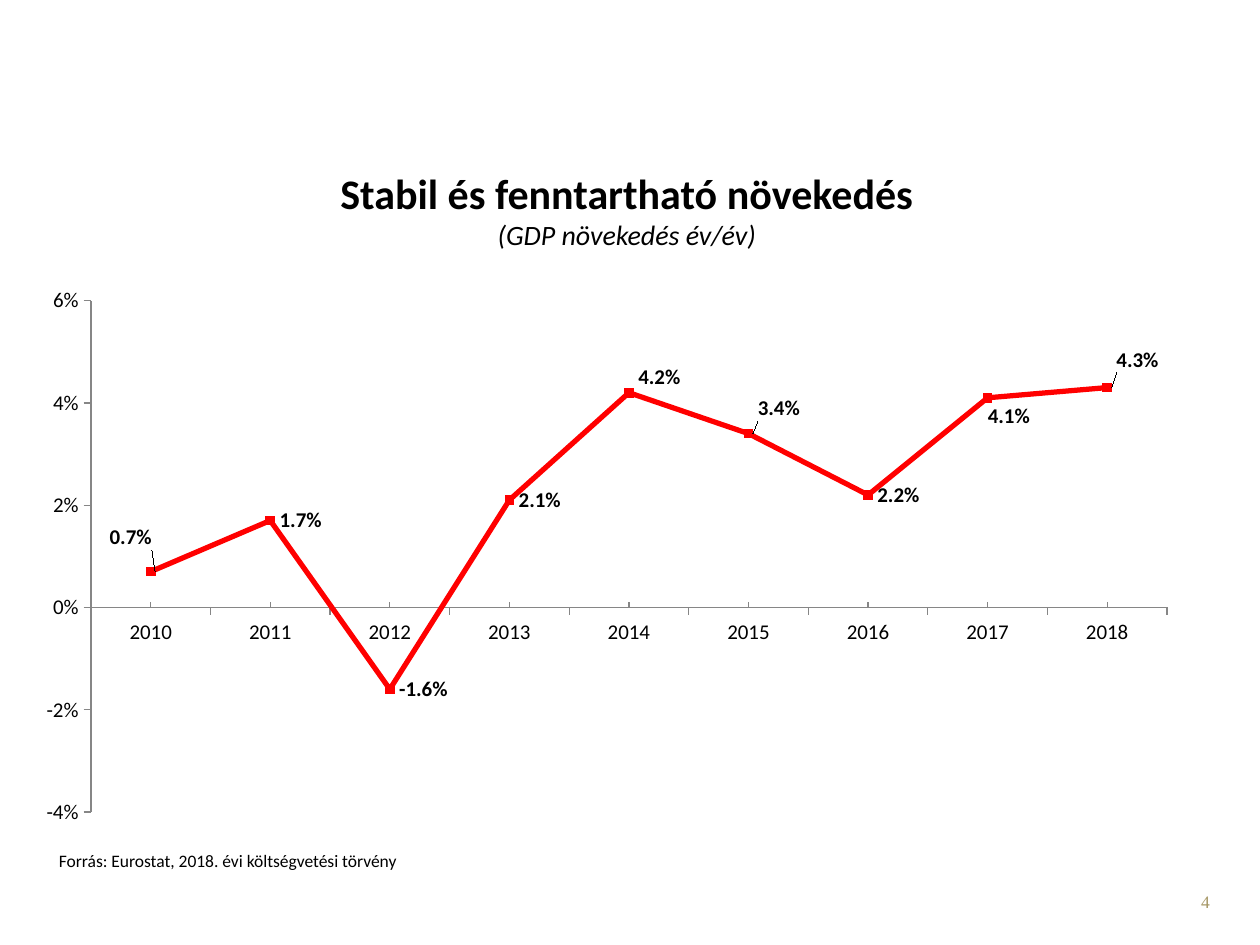
"""Build a slide with a line chart of yearly GDP growth."""
from lxml.etree import SubElement
from pptx import Presentation
from pptx.chart.data import CategoryChartData
from pptx.dml.color import RGBColor
from pptx.enum.chart import XL_CHART_TYPE as ChartType, XL_LABEL_POSITION as LabelPosition
from pptx.enum.chart import XL_MARKER_STYLE as MarkerStyle, XL_TICK_MARK as TickMark
from pptx.enum.text import PP_ALIGN as Align
from pptx.oxml import parse_xml
from pptx.oxml.ns import nsdecls, qn
from pptx.util import Pt


def color(value):
    return RGBColor.from_string(value)


def layout(**values):
    element = parse_xml(f"<c:layout {nsdecls('c')}/>")
    manual = SubElement(element, qn("c:manualLayout"))
    for name, value in values.items():
        SubElement(manual, qn(f"c:{name}")).set("val", str(value))
    return element


presentation = Presentation()
presentation.slide_width, presentation.slide_height = Pt(720), Pt(540)
slide = presentation.slides.add_slide(presentation.slide_layouts[6])

growth = {
    "2010": 0.007, "2011": 0.017, "2012": -0.016, "2013": 0.021, "2014": 0.042,
    "2015": 0.034, "2016": 0.022, "2017": 0.041, "2018": 0.043,
}
chart_data = CategoryChartData(number_format="0.0%")
chart_data.categories = list(growth)
chart_data.add_series("Series 1", list(growth.values()))
chart = slide.shapes.add_chart(
    ChartType.LINE_MARKERS, Pt(26.6), Pt(149.8), Pt(656), Pt(324), chart_data
).chart
chart.has_legend = chart.has_title = False
chart.font.name, chart.font.size = "Calibri", Pt(10)
chart.font.color.rgb = color("000000")

plot_area = chart.plots[0]._element.getparent()
for old_layout in plot_area.findall(qn("c:layout")):
    plot_area.remove(old_layout)
plot_area.insert(0, layout(
    layoutTarget="inner", xMode="edge", yMode="edge", x=0.036, y=0.068, w=0.94, h=0.902
))

value_axis, category_axis = chart.value_axis, chart.category_axis
value_format = {
    "minimum_scale": -0.04, "maximum_scale": 0.06, "major_unit": 0.02,
    "has_major_gridlines": False, "minor_tick_mark": TickMark.NONE,
}
for name, value in value_format.items():
    setattr(value_axis, name, value)
value_axis.tick_labels.number_format = "0%"
value_axis.tick_labels.number_format_is_linked = False
category_axis.minor_tick_mark = TickMark.INSIDE
for axis in (value_axis, category_axis):
    axis.major_tick_mark = TickMark.OUTSIDE
    axis.tick_labels.font.size = Pt(12)
    axis.format.line.color.rgb = color("868686")
    axis.format.line.width = Pt(0.75)

plot = chart.plots[0]
plot.vary_by_categories = False
series = plot.series[0]
series.smooth = False
series.format.line.color.rgb = color("FF0000")
series.format.line.width = Pt(3)
marker = series.marker
marker.style, marker.size = MarkerStyle.SQUARE, 5
marker.format.fill.solid()
marker.format.fill.fore_color.rgb = color("FF0000")
marker.format.line.color.rgb = color("FF0000")

labels = series.data_labels
labels.show_value = True
labels.number_format, labels.number_format_is_linked = "0.0%", False
labels.position = LabelPosition.RIGHT
labels.font.size, labels.font.bold = Pt(12), True

label_offsets = {
    "2010": (-0.044, -0.06), "2014": (0, -0.028), "2015": (0, -0.044),
    "2017": (-0.008, 0.032), "2018": (0, -0.048),
}
years = list(growth)
for year, (x, y) in label_offsets.items():
    index = years.index(year)
    label = series.points[index].data_label
    label.font.size, label.font.bold = Pt(12), True
    label.position = LabelPosition.RIGHT
    for element in labels._element.findall(qn("c:dLbl")):
        if element.find(qn("c:idx")).get("val") == str(index):
            element.insert(1, layout(x=x, y=y))

texts = [
    ((530.6, 505.4, 167.8, 28.8), Align.RIGHT, [
        ("4", {"size": Pt(10), "name": "Times New Roman"}, "A69765")]),
    ((26.6, 482.4, 323.3, 19.4), Align.LEFT, [
        ("Forrás: Eurostat, 2018. évi költségvetési törvény",
         {"size": Pt(10), "name": "Calibri"}, "000000")]),
    ((26.6, 92.2, 663.1, 55.4), Align.CENTER, [
        ("Stabil és fenntartható növekedés",
         {"size": Pt(24), "name": "Calibri", "bold": True}, "000000"),
        ("(GDP növekedés év/év)",
         {"size": Pt(16), "name": "Calibri", "italic": True}, "000000")]),
]
for box, alignment, lines in texts:
    frame = slide.shapes.add_textbox(*map(Pt, box)).text_frame
    frame.word_wrap = True
    for number, (text, font_format, text_color) in enumerate(lines):
        paragraph = frame.add_paragraph() if number else frame.paragraphs[0]
        paragraph.alignment = alignment
        run = paragraph.add_run()
        run.text = text
        run.font.color.rgb = color(text_color)
        for name, value in font_format.items():
            setattr(run.font, name, value)

presentation.save("out.pptx")
